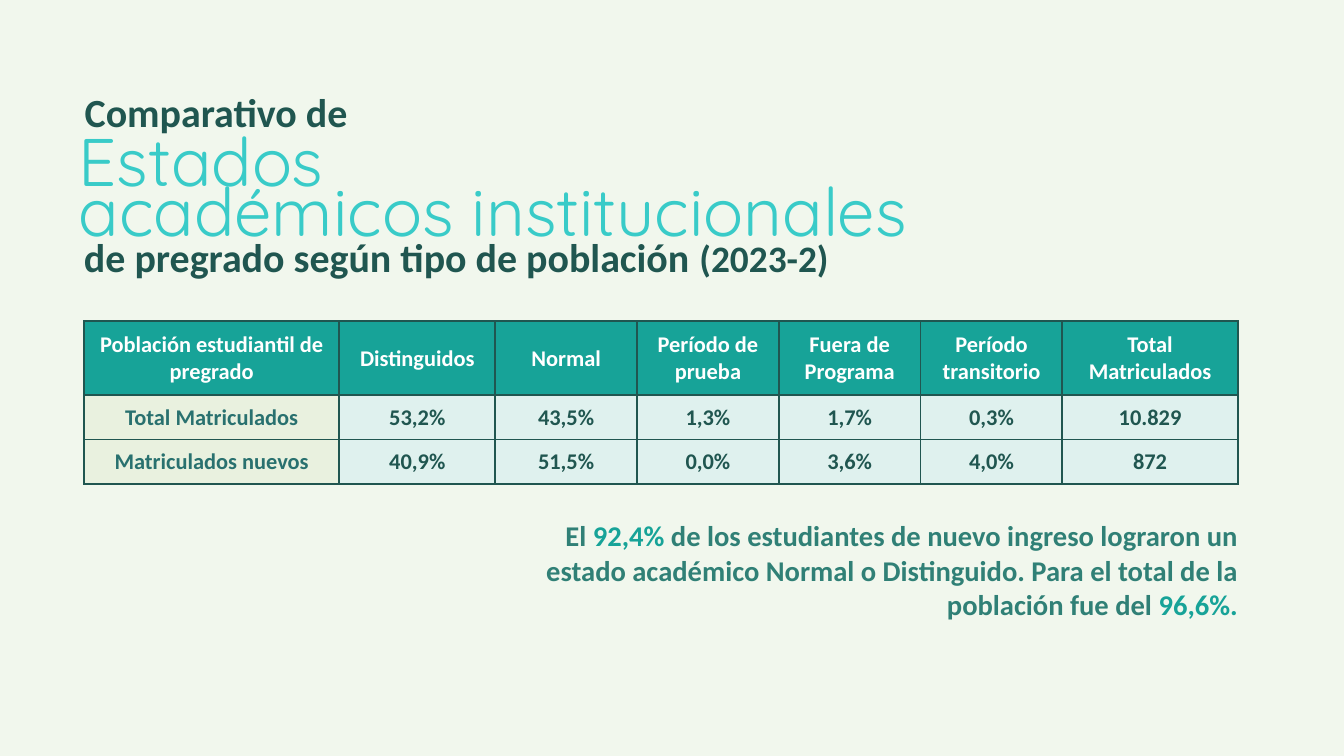
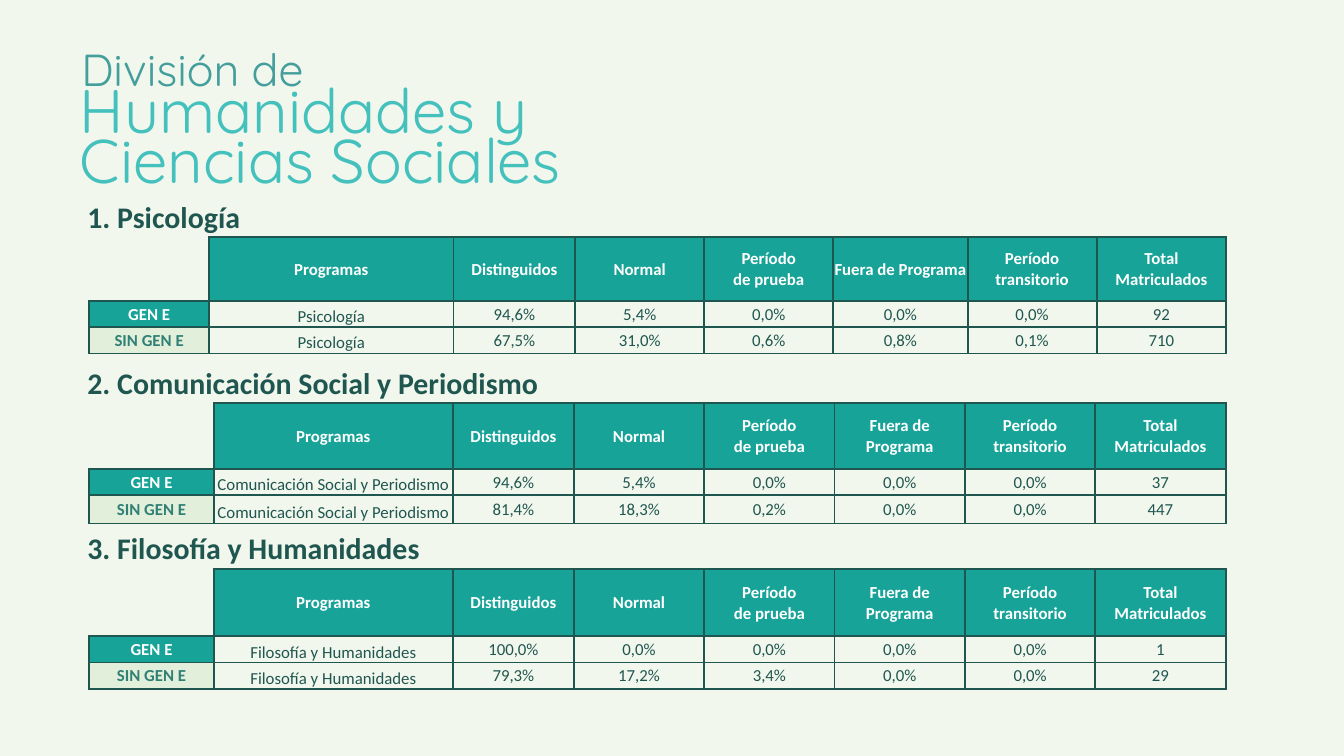
from lxml import etree
from pptx import Presentation
from pptx import util as u
from pptx.dml.color import RGBColor
from pptx.enum import text as t
from pptx.oxml.ns import qn

PX = 9144  # EMU, 100 px to the inch
INK = {
    "paper": "F1F7ED", "dark": "205650", "teal": "17A398", "note": "308076",
    "aqua": "39CBC8", "sea": "44C0BD", "haze": "449E9C", "white": "FFFFFF",
    "label": "29716F", "leaf": "E9F1DF", "ice": "DFF1EE", "mint": "E2EFDA",
}
# Each kind of cell: fill, text colour, bold, vertical anchor
MID, LOW = t.MSO_ANCHOR.MIDDLE, t.MSO_ANCHOR.BOTTOM
KINDS = {
    "head": ("teal", "white", True, MID),
    "label": ("leaf", "label", True, MID),
    "share": ("ice", "dark", True, MID),
    "without": ("mint", "note", True, MID),
    "name": ("paper", "dark", False, LOW),
    "value": ("paper", "dark", False, MID),
}
ALIGN = {"l": t.PP_ALIGN.LEFT, "c": t.PP_ALIGN.CENTER, "r": t.PP_ALIGN.RIGHT}


def rgb(name):
    return RGBColor.from_string(INK[name])


def write(frame, lines, size=18, color="dark", bold=False, face="Calibri",
          align="l", lead=()):
    """Fill a frame; a line is a string or a list of (text, changes) runs.

    The last value of lead holds for all further lines.
    """
    for i, line in enumerate(lines):
        para = frame.paragraphs[0] if i == 0 else frame.add_paragraph()
        para.alignment = ALIGN[align]
        if lead:
            para.line_spacing = u.Pt(lead[min(i, len(lead) - 1)])
        for words, change in [(line, {})] if isinstance(line, str) else line:
            run = para.add_run()
            run.text = words
            font = run.font
            font.name = face
            font.size = u.Pt(change.get("size", size))
            font.bold = bold
            font.color.rgb = rgb(change.get("color", color))


def edge(cell, sides):
    """Draw the named sides of a cell and clear the others."""
    props = cell._tc.get_or_add_tcPr()
    for i, side in enumerate("LRTB"):
        line = etree.Element(qn(f"a:ln{side}"), w=str(u.Pt(2.25)))
        if side in sides:
            fill = etree.SubElement(line, qn("a:solidFill"))
            etree.SubElement(fill, qn("a:srgbClr"), val=INK["dark"])
        else:
            etree.SubElement(line, qn("a:noFill"))
        props.insert(i, line)


class Deck:
    def __init__(self):
        self.prs = Presentation()
        self.prs.slide_width, self.prs.slide_height = 2000 * PX, 1125 * PX
        self.slide = None

    def page(self):
        self.slide = self.prs.slides.add_slide(self.prs.slide_layouts[5])
        fill = self.slide.background.fill
        fill.solid()
        fill.fore_color.rgb = rgb("paper")

    def place(self, shape, box, lines, **fmt):
        shape.left, shape.top, shape.width, shape.height = (n * PX for n in box)
        frame = shape.text_frame
        frame.margin_left = frame.margin_right = 0
        frame.margin_top = frame.margin_bottom = 0
        frame.word_wrap = True
        frame.vertical_anchor = t.MSO_ANCHOR.TOP
        frame.auto_size = t.MSO_AUTO_SIZE.SHAPE_TO_FIT_TEXT
        write(frame, lines, **fmt)

    def title(self, box, lines, **fmt):
        self.place(self.slide.shapes.title, box, lines, face="Quicksand", **fmt)

    def text(self, box, lines, **fmt):
        self.place(self.slide.shapes.add_textbox(0, 0, 0, 0), box, lines, **fmt)

    def table(self, left, top, cols, rows, grid, size):
        """Build a table from grid rows of (kinds, texts); None is a blank cell."""
        box = [n * PX for n in (left, top, sum(cols), sum(rows))]
        table = self.slide.shapes.add_table(len(rows), len(cols), *box).table
        table.first_row = table.horz_banding = False
        for col, wide in zip(table.columns, cols):
            col.width = wide * PX
        for row, high in zip(table.rows, rows):
            row.height = high * PX
        for r, (kinds, texts) in enumerate(grid):
            for c, (kind, words) in enumerate(zip(kinds, texts)):
                self.cell(table.cell(r, c), kind, words, size)
        return table

    def cell(self, cell, kind, words, size):
        cell.margin_left = cell.margin_right = cell.margin_top = PX
        cell.margin_bottom = 0
        if kind is None:
            cell.fill.background()
            return
        fill, color, bold, cell.vertical_anchor = KINDS[kind]
        cell.fill.solid()
        cell.fill.fore_color.rgb = rgb(fill)
        edge(cell, "LRTB")
        if words:
            write(cell.text_frame, words.split("\n"), size=size, color=color,
                  bold=bold, align="c")

    def program(self, top, name, cols, rows, gen, rest):
        """Add a table whose head spans two rows beside an empty corner."""
        head = ["", "Programas", "Distinguidos", "Normal", "Período\nde prueba",
                "Fuera de Programa", "Período transitorio", "Total\nMatriculados"]
        top_kinds = [None] + ["head"] * 7
        body = ["name"] + ["value"] * 6
        grid = [
            (top_kinds, head),
            (top_kinds, [""] * 8),
            (["head"] + body, ["GEN E", name] + gen.split()),
            (["without"] + body, ["SIN GEN E", name] + rest.split()),
        ]
        table = self.table(133, top, cols, rows, grid, 18)
        edge(table.cell(0, 0), "R")
        edge(table.cell(1, 0), "RB")
        for c in range(1, 8):
            table.cell(0, c).merge(table.cell(1, c))


def states(deck):
    deck.page()
    strong = dict(size=42.8, bold=True, lead=(51.7,))
    deck.text((126, 130, 1846, 71), ["Comparativo de"], **strong)
    deck.title((117, 179, 1846, 198), ["Estados", "académicos institucionales"],
               size=72, color="aqua", lead=(84.9, 54))
    accent = {"color": "teal"}
    deck.text((758, 771, 1084, 155), [[
        ("El ", {}), ("92,4%", accent),
        (" de los estudiantes de nuevo ingreso lograron un estado académico "
         "Normal o Distinguido. Para el total de la población fue del ", {}),
        ("96,6%.", accent),
    ]], size=30.6, color="note", bold=True, align="r", lead=(37,))
    deck.text((125, 346, 1846, 70), [[
        ("de pregrado según tipo de población ", {}), ("(2023-2)", {"size": 40}),
    ]], **strong)

    head = ["Población estudiantil de pregrado", "Distinguidos", "Normal",
            "Período de prueba", "Fuera de Programa", "Período transitorio",
            "Total\nMatriculados"]
    body = ["label"] + ["share"] * 6
    grid = [
        (["head"] * 7, head),
        (body, ["Total Matriculados"] + "53,2% 43,5% 1,3% 1,7% 0,3% 10.829".split()),
        (body, ["Matriculados nuevos"] + "40,9% 51,5% 0,0% 3,6% 4,0% 872".split()),
    ]
    deck.table(125, 478, [380, 232] + [211] * 4 + [261], [110, 66, 66], grid, 24)


def programs(deck):
    deck.page()
    deck.text((121, 62, 596, 81), ["División de"], size=48, color="haze",
              face="Quicksand")
    deck.title((119, 142, 1031, 153), ["Humanidades y Ciencias Sociales"],
               size=66, color="sea", lead=(54,))
    wide = [185, 356, 180] + [194] * 5
    parts = [
        (304, 353, "Psicología", [178, 364, 181, 192, 192, 200, 192, 193],
         [34, 34, 39, 39],
         "94,6% 5,4% 0,0% 0,0% 0,0% 92", "67,5% 31,0% 0,6% 0,8% 0,1% 710"),
        (551, 600, "Comunicación Social y Periodismo", wide, [37, 37, 39, 42],
         "94,6% 5,4% 0,0% 0,0% 0,0% 37", "81,4% 18,3% 0,2% 0,0% 0,0% 447"),
        (796, 847, "Filosofía y Humanidades", wide, [39] * 4,
         "100,0% 0,0% 0,0% 0,0% 0,0% 1", "79,3% 17,2% 3,4% 0,0% 0,0% 29"),
    ]
    for i, (y, top, name, cols, rows, gen, rest) in enumerate(parts, 1):
        deck.text((130, y, 695, 47), [f"{i}. {name}"], size=32, bold=True,
                  lead=(32.7,))
        deck.program(top, name, cols, rows, gen, rest)


def main():
    deck = Deck()
    states(deck)
    programs(deck)
    deck.prs.save("out.pptx")


if __name__ == "__main__":
    main()
